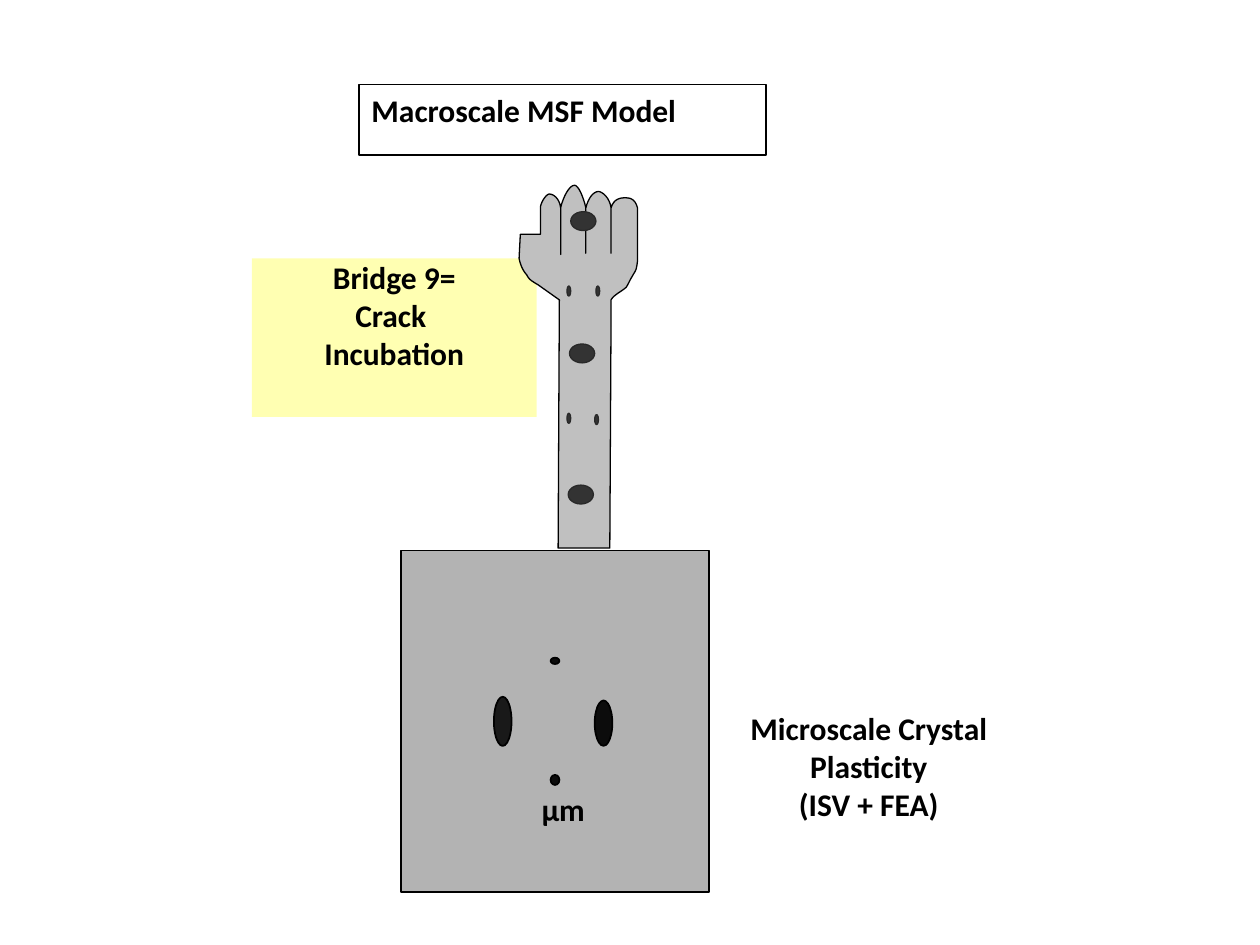
from pptx import Presentation
from pptx import util as u
from pptx.dml import color
from pptx.enum import shapes, text
from pptx.oxml import parse_xml
from pptx.oxml.ns import nsdecls

Inches = u.Inches
RECT, OVAL = shapes.MSO_SHAPE.RECTANGLE, shapes.MSO_SHAPE.OVAL

deck = Presentation()
deck.slide_width, deck.slide_height = Inches(10), Inches(7.5)
slide = deck.slides.add_slide(deck.slide_layouts[6])
items = slide.shapes


def paint(shape, fill=None, line=None, width=0.75):
    """Set fill and outline; None means none."""
    shape.shadow.inherit = False
    if fill:
        shape.fill.solid()
        shape.fill.fore_color.rgb = color.RGBColor.from_string(fill)
    else:
        shape.fill.background()
    if line:
        shape.line.color.rgb = color.RGBColor.from_string(line)
        shape.line.width = u.Pt(width)
    else:
        shape.line.fill.background()
    return shape


def write(words, box, align="CENTER", inset=(0, 0), fill=None, line=None):
    """Add a bold label in a box (left, top, width, height)."""
    label = paint(items.add_textbox(*map(Inches, box)), fill, line)
    frame = label.text_frame
    frame.word_wrap = True
    frame.margin_left = frame.margin_right = Inches(inset[0])
    frame.margin_top = frame.margin_bottom = Inches(inset[1])
    frame.text = words
    for para in frame.paragraphs:
        para.alignment = getattr(text.PP_ALIGN, align)
        for run in para.runs:
            run.font.name, run.font.size, run.font.bold = "Calibri", u.Pt(18), True
            run.font.color.rgb = color.RGBColor.from_string("000000")
    return label


# Microscale block with its pores
write("Microscale Crystal Plasticity\v(ISV + FEA)", (5.67, 5.63, 2.45, 1.26))
block = items.add_shape(RECT, *map(Inches, (3.18, 4.37, 2.45, 2.71)))
paint(block, "B3B3B3", "000000", 1)
for *box, fill in [
    (3.92, 5.53, 0.14, 0.39, "191919"),
    (4.72, 5.56, 0.14, 0.36, "0C0C0C"),
    (4.37, 5.22, 0.07, 0.05, "0C0C0C"),
    (4.37, 6.15, 0.07, 0.08, "0C0C0C"),
]:
    paint(items.add_shape(OVAL, *map(Inches, box)), fill, "000000", 1)
write("µm", (3.54, 6.27, 1.86, 0.42))

# Bridge label, 75% opaque
bridge = write("Bridge 9=\vCrack \nIncubation", (2, 2.05, 2.26, 1.26), fill="FFFF99")
tint = bridge.fill._xPr.solidFill.srgbClr
tint.append(parse_xml(f'<a:alpha {nsdecls("a")} val="75000"/>'))

# Arm and hand: two numbers are a line, six are a cubic curve
steps = [
    (4.85, 2.52), (4.85, 2.38),
    (4.87, 2.34, 4.94, 2.31, 4.97, 2.28),
    (4.99, 2.25, 5, 2.22, 5.02, 2.19),
    (5.04, 2.15, 5.05, 2.16, 5.06, 2.07),
    (5.06, 1.65),
    (5.04, 1.57, 4.99, 1.57, 4.96, 1.57),
    (4.92, 1.57, 4.87, 1.58, 4.85, 1.65),
    (4.85, 2.01), (4.85, 1.65),
    (4.84, 1.57, 4.78, 1.52, 4.75, 1.52),
    (4.71, 1.52, 4.67, 1.57, 4.65, 1.65),
    (4.65, 2.01), (4.65, 1.65),
    (4.63, 1.56, 4.59, 1.47, 4.56, 1.47),
    (4.52, 1.47, 4.47, 1.56, 4.45, 1.65),
    (4.45, 2.02), (4.45, 1.65),
    (4.44, 1.57, 4.39, 1.54, 4.36, 1.54),
    (4.34, 1.54, 4.3, 1.59, 4.29, 1.64),
    (4.29, 1.86), (4.13, 1.86), (4.12, 2.05),
    (4.13, 2.1, 4.15, 2.15, 4.18, 2.18),
    (4.2, 2.22, 4.22, 2.23, 4.27, 2.26),
    (4.44, 2.38), (4.43, 4.35),
]
dots = [(4.84, 4.35)]
for step in steps:
    if len(step) == 2:
        dots.append(step)
        continue
    ends = list(zip(dots[-1], step[:2], step[2:4], step[4:]))
    for n in range(1, 9):
        t = n / 8
        dots.append(tuple(
            a * (1 - t) ** 3 + 3 * b * t * (1 - t) ** 2 + 3 * c * t * t * (1 - t) + d * t ** 3
            for a, b, c, d in ends))
path = [(Inches(x), Inches(y)) for x, y in dots]
arm = items.build_freeform(*path[0])
arm.add_line_segments(path[1:], close=True)
paint(arm.convert_to_shape(), "C0C0C0", "000000")

# Large and small pores along the arm
large = [(4.51, 3.85), (4.52, 2.73), (4.53, 1.68)]
small = [(4.5, 3.28), (4.72, 3.29), (4.5, 2.27), (4.73, 2.27)]
for spots, size in [(large, (0.2, 0.15)), (small, (0.03, 0.08))]:
    for spot in spots:
        paint(items.add_shape(OVAL, *map(Inches, spot + size)), "333333", "292929")

# Macroscale label
write("Macroscale MSF Model", (2.85, 0.67, 3.23, 0.56), align="LEFT",
      inset=(0.1, 0.05), line="000000")

deck.save("out.pptx")
